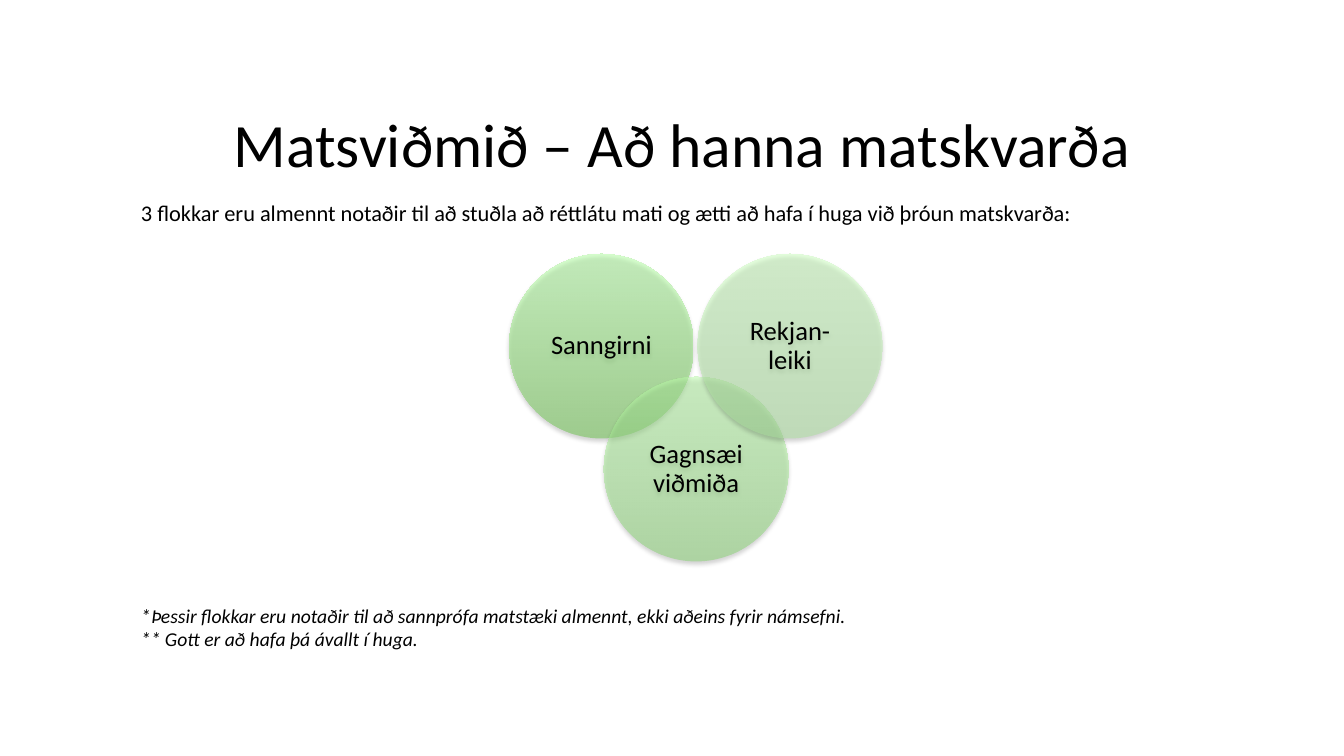
import pptx
import pptx.util
import pptx.dml.color
import pptx.enum.shapes
import pptx.enum.text
import pptx.oxml
import pptx.oxml.ns
from pptx.util import Inches

COLORS = {
    "text": "000000",
    "fairness_low": "69C449", "fairness_high": "B0FF9F",
    "clarity_low": "87D372", "clarity_high": "BCFFAA",
    "trace_low": "ABE19E", "trace_high": "CBFFBD",
}
OPACITY = 49000
DIAMETER = 1.83
SHADOW = (
    '<a:outerShdw %s blurRad="39400" dist="22900" dir="5400000" rotWithShape="0">'
    '<a:srgbClr val="000000"><a:alpha val="35000"/></a:srgbClr></a:outerShdw>'
    % pptx.oxml.ns.nsdecls("a")
)


def rgb(name):
    return pptx.dml.color.RGBColor.from_string(COLORS[name])


def write(sp, lines, size, centred=False, italic=False):
    """Fill a shape with one paragraph per line; centred text is tight and in the middle."""
    tf = sp.text_frame
    tf.word_wrap = True
    anchor = pptx.enum.text.MSO_ANCHOR
    tf.vertical_anchor = anchor.MIDDLE if centred else anchor.TOP
    for i, line in enumerate(lines):
        p = tf.paragraphs[0] if i == 0 else tf.add_paragraph()
        if centred:
            p.alignment = pptx.enum.text.PP_ALIGN.CENTER
            p.line_spacing = 0.9
        r = p.add_run()
        r.text = line
        r.font.name = "Calibri"
        r.font.size = pptx.util.Pt(size)
        r.font.color.rgb = rgb("text")
        if italic:
            r.font.italic = True


prs = pptx.Presentation()
prs.slide_width = Inches(13.33)
prs.slide_height = Inches(7.5)
s = prs.slides.add_slide(prs.slide_layouts[6])

title = s.shapes.add_textbox(Inches(1.02), Inches(0.79), Inches(11.5), Inches(1.35))
write(title, ["Matsviðmið – Að hanna matskvarða"], 44, centred=True)

intro = s.shapes.add_textbox(Inches(1.3), Inches(1.93), Inches(11.22), Inches(0.37))
write(intro, ["3 flokkar eru almennt notaðir til að stuðla að réttlátu mati "
              "og ætti að hafa í huga við þróun matskvarða:"], 16)

circles = [
    ("Sanngirni", 5.05, 2.52, "fairness"),
    ("Gagnsæi viðmiða", 5.99, 3.74, "clarity"),
    ("Rekjan-leiki", 6.92, 2.52, "trace"),
]
for label, left, top, color in circles:
    sp = s.shapes.add_shape(pptx.enum.shapes.MSO_SHAPE.OVAL, Inches(left), Inches(top),
                            Inches(DIAMETER), Inches(DIAMETER))
    sp.line.fill.background()
    sp.fill.gradient()
    sp.fill.gradient_angle = 90
    for stop, end in zip(sp.fill.gradient_stops, ("low", "high")):
        stop.color.rgb = rgb(f"{color}_{end}")
    spPr = sp._element.spPr
    for clr in spPr.findall(".//" + pptx.oxml.ns.qn("a:srgbClr")):
        clr.append(pptx.oxml.parse_xml(
            f'<a:alpha {pptx.oxml.ns.nsdecls("a")} val="{OPACITY}"/>'))
    sp.shadow.inherit = False
    spPr.find(pptx.oxml.ns.qn("a:effectLst")).append(pptx.oxml.parse_xml(SHADOW))
    tf = sp.text_frame
    tf.margin_left = tf.margin_right = tf.margin_top = tf.margin_bottom = Inches(0.08)
    write(sp, [label], 19, centred=True)

notes = s.shapes.add_textbox(Inches(1.3), Inches(5.94), Inches(11.22), Inches(0.57))
write(notes, [
    "*Þessir flokkar eru notaðir til að sannprófa matstæki almennt, ekki aðeins fyrir námsefni.",
    "** Gott er að hafa þá ávallt í huga.",
], 14, italic=True)

prs.save("out.pptx")
